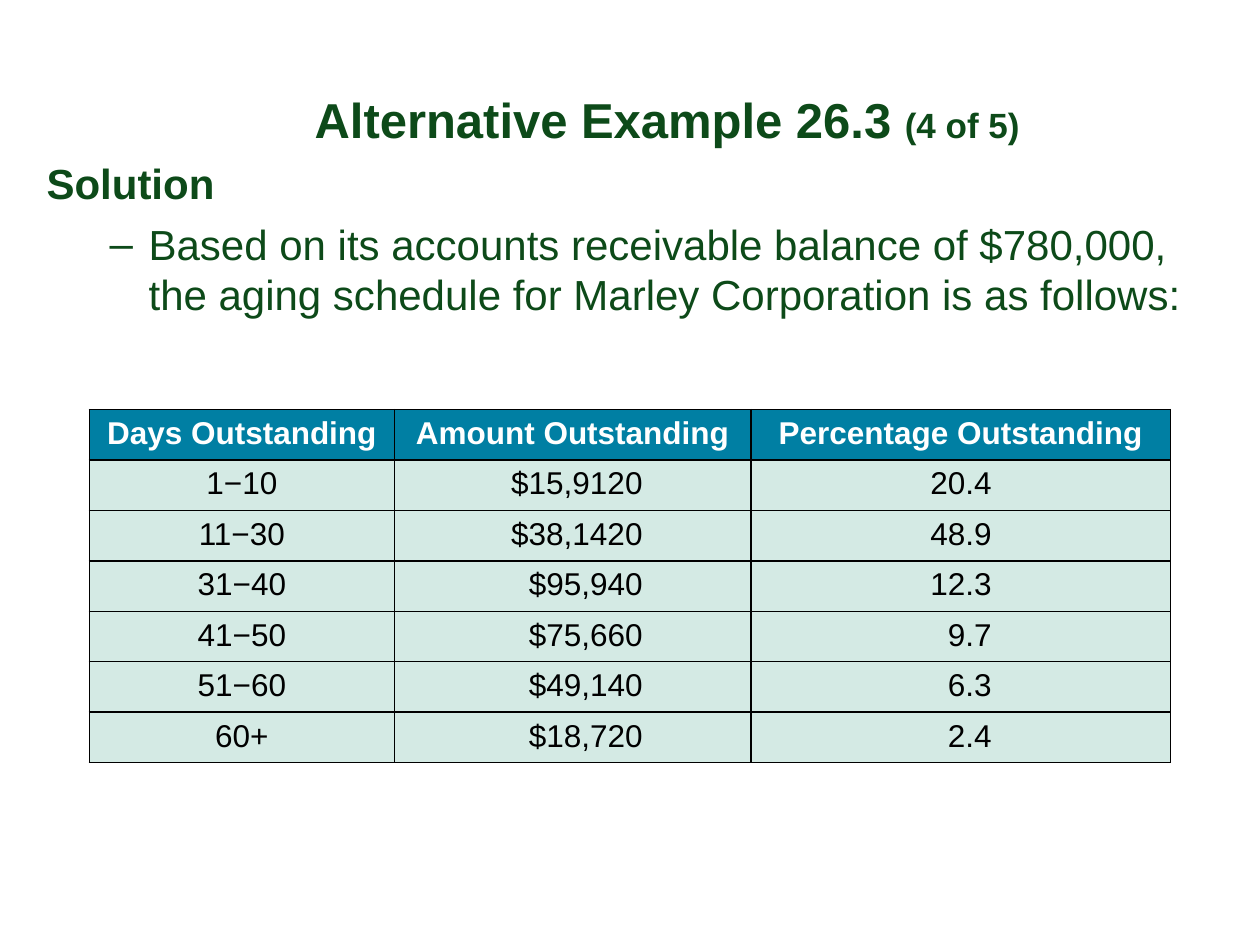
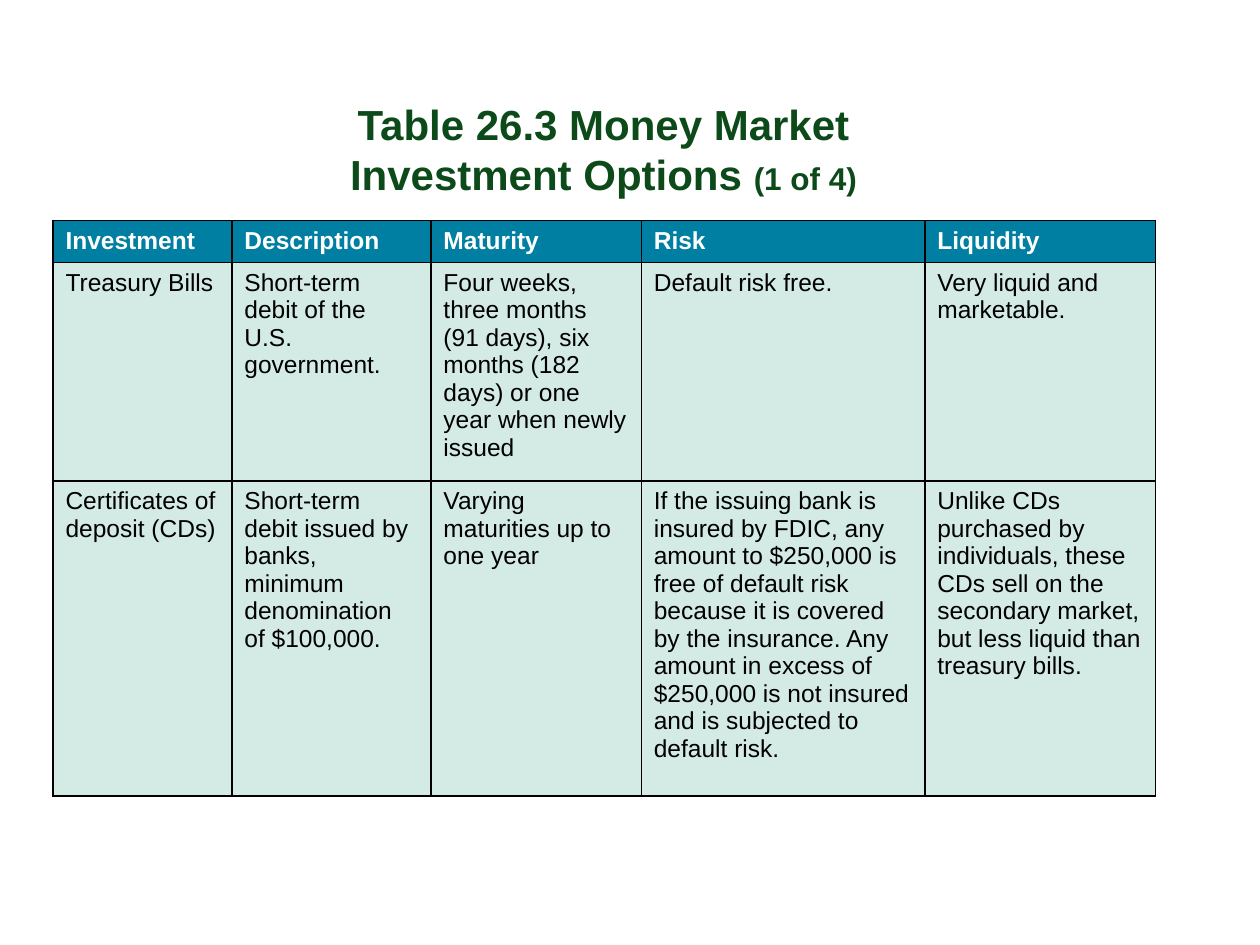
from dataclasses import dataclass

from lxml.etree import SubElement
from pptx import Presentation
from pptx.dml.color import RGBColor as Rgb
from pptx.enum.text import MSO_ANCHOR as Anchor, PP_ALIGN as Align
from pptx.oxml.ns import qn
from pptx.util import Inches, Pt


@dataclass(frozen=True)
class Theme:
    """Colours, font and type sizes shared by the slides."""
    font: str = "Arial"
    green: str = "0D4A19"
    header: str = "007FA3"
    row: str = "D4EAE4"
    black: str = "000000"
    white: str = "FFFFFF"
    title: int = 28
    body: int = 24
    label: int = 20
    aging: int = 18
    options: int = 14


THEME = Theme()

AGING = [
    ("Days Outstanding", "Amount Outstanding", "Percentage Outstanding"),
    ("1−10", "$15,9120", "20.4"),
    ("11−30", "$38,1420", "48.9"),
    ("31−40", "$95,940", "12.3"),
    ("41−50", "$75,660", "9.7"),
    ("51−60", "$49,140", "6.3"),
    ("60+", "$18,720", "2.4"),
]

OPTIONS = [
    ("Investment", "Description", "Maturity", "Risk", "Liquidity"),
    ("Treasury Bills",
     "Short-term debit of the U.S. government.",
     "Four weeks, three months (91 days), six months (182 days) or one year "
     "when newly issued",
     "Default risk free.",
     "Very liquid and marketable."),
    ("Certificates of deposit (CDs)",
     "Short-term debit issued by banks, minimum denomination of $100,000.",
     "Varying maturities up to one year",
     "If the issuing bank is insured by FDIC, any amount to $250,000 is free of "
     "default risk because it is covered by the insurance. Any amount in excess "
     "of $250,000 is not insured and is subjected to default risk.",
     "Unlike CDs purchased by individuals, these CDs sell on the secondary "
     "market, but less liquid than treasury bills."),
]


def write(paragraph, text, size, color=THEME.green, bold=False, align=Align.LEFT):
    """Append one formatted run to a paragraph."""
    paragraph.alignment = align
    run = paragraph.add_run()
    run.text = text
    run.font.name = THEME.font
    run.font.size = Pt(size)
    run.font.bold = bold
    run.font.color.rgb = Rgb.from_string(color)


def add_frame(slide, box, anchor=Anchor.TOP):
    """Add a wrapping text frame without insets."""
    frame = slide.shapes.add_textbox(*map(Inches, box)).text_frame
    frame.word_wrap = True
    frame.vertical_anchor = anchor
    frame.margin_left = frame.margin_right = 0
    frame.margin_top = frame.margin_bottom = 0
    return frame


def add_title(slide, box, title, part, size, part_size):
    """Add a centred title followed by its smaller part number."""
    heading = add_frame(slide, box, Anchor.BOTTOM).paragraphs[0]
    for text, points in ((title + " ", size), (part, part_size)):
        write(heading, text, points, bold=True, align=Align.CENTER)


def add_dash(paragraph, left, hanging):
    """Give a paragraph a hanging dash bullet."""
    properties = paragraph._p.get_or_add_pPr()
    properties.set("marL", str(Inches(left)))
    properties.set("indent", str(-Inches(hanging)))
    color = SubElement(properties, qn("a:buClr"))
    SubElement(color, qn("a:srgbClr"), val=THEME.green)
    SubElement(properties, qn("a:buFont"), typeface=THEME.font)
    SubElement(properties, qn("a:buChar"), char="–")


def add_solution(slide, box, heading, statement):
    """Add the solution heading and its dashed statement."""
    frame = add_frame(slide, box)
    write(frame.paragraphs[0], heading, THEME.body, bold=True)
    point = frame.add_paragraph()
    add_dash(point, 0.81, 0.31)
    point.space_before = Pt(6)
    write(point, statement, THEME.body)


def add_borders(cell):
    """Draw a one-point black line on each side of a cell."""
    properties = cell._tc.get_or_add_tcPr()
    for side in ("lnL", "lnR", "lnT", "lnB"):
        line = SubElement(properties, qn(f"a:{side}"), w=str(Pt(1)))
        fill = SubElement(line, qn("a:solidFill"))
        SubElement(fill, qn("a:srgbClr"), val=THEME.black)


def add_grid(slide, origin, widths, heights, rows, size, align=Align.LEFT,
             number_margins=None):
    """Add a bordered table; number_margins right-aligns the given columns."""
    number_margins = number_margins or {}
    box = (*origin, sum(widths), sum(heights))
    table = slide.shapes.add_table(len(rows), len(widths), *map(Inches, box)).table
    table.horz_banding = False
    for column, width in zip(table.columns, widths):
        column.width = Inches(width)
    for r, (height, texts) in enumerate(zip(heights, rows)):
        table.rows[r].height = Inches(height)
        is_header = r == 0
        for c, text in enumerate(texts):
            cell = table.cell(r, c)
            add_borders(cell)
            cell.fill.solid()
            cell.fill.fore_color.rgb = Rgb.from_string(
                THEME.header if is_header else THEME.row)
            is_number = c in number_margins and not is_header
            if is_number:
                cell.margin_right = Inches(number_margins[c])
            write(cell.text_frame.paragraphs[0], text, size,
                  color=THEME.white if is_header else THEME.black,
                  bold=is_header, align=Align.RIGHT if is_number else align)


def build_aging_slide(slide):
    """Build the aging schedule example."""
    add_title(slide, (2.42, 0.71, 5.75, 0.47), "Alternative Example 26.3",
              "(4 of 5)", THEME.title, THEME.label)
    add_solution(slide, (0.37, 1.25, 9, 1.7), "Solution",
                 "Based on its accounts receivable balance of $780,000, the aging "
                 "schedule for Marley Corporation is as follows:")
    add_grid(slide, (0.71, 3.25), (2.42, 2.83, 3.33), [0.4] * len(AGING), AGING,
             THEME.aging, Align.CENTER, number_margins={1: 0.86, 2: 1.42})


def build_options_slide(slide):
    """Build the table of money market investments."""
    add_title(slide, (2.29, 0.77, 5, 0.81),
              "Table 26.3 Money Market Investment Options", "(1 of 4)",
              THEME.body, THEME.aging)
    add_grid(slide, (0.42, 1.75), (1.42, 1.58, 1.67, 2.25, 1.83),
             (0.33, 1.73, 2.5), OPTIONS, THEME.options)


def main():
    """Create and save the presentation."""
    deck = Presentation()
    deck.slide_width, deck.slide_height = Inches(10), Inches(7.5)
    for build in (build_aging_slide, build_options_slide):
        build(deck.slides.add_slide(deck.slide_layouts[6]))
    deck.save("out.pptx")


if __name__ == "__main__":
    main()
